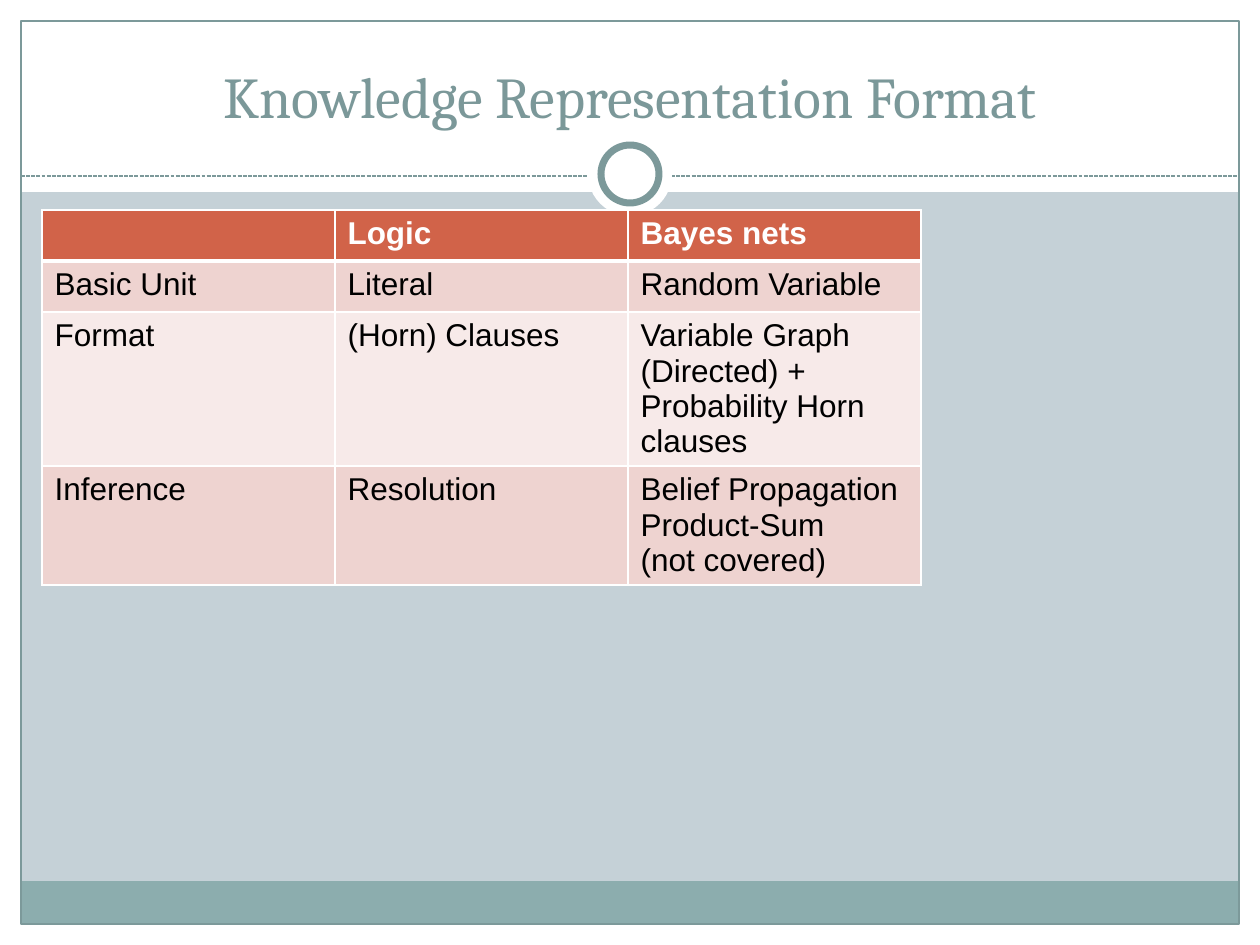
import pptx
import pptx.dml.color
import pptx.enum.dml
import pptx.enum.shapes
import pptx.enum.text
import pptx.oxml
import pptx.oxml.ns
import pptx.util

SLIDE_W, SLIDE_H = 1260, 945
MARGIN = 21
WHITE, BLACK, SAGE, TITLE_INK = "FFFFFF", "000000", "7C999A", "7B9899"
BACKDROP, FOOTER, HEADER = "C5D1D7", "8CADAE", "D16349"
BANDS = ("EED3D0", "F7EAE9")
ROW_HEIGHTS = (51, 51, 154, 119)
COMPARISON = (
    ("", "Logic", "Bayes nets"),
    ("Basic Unit", "Literal", "Random Variable"),
    ("Format", "(Horn) Clauses", "Variable Graph\v(Directed) +\nProbability Horn clauses"),
    ("Inference", "Resolution", "Belief Propagation\vProduct-Sum\v(not covered)"),
)


def px(length):
    """Turn pixels at 126 to the inch into EMU."""
    return pptx.util.Emu(round(length * 914400 / 126))


def color(value):
    """Turn a hex string into a colour."""
    return pptx.dml.color.RGBColor.from_string(value)


def add_figure(slide, box, fill=None, line=None, width=0.75, kind="RECTANGLE"):
    """Draw one preset shape in a box, without a shadow."""
    preset = getattr(pptx.enum.shapes.MSO_SHAPE, kind)
    figure = slide.shapes.add_shape(preset, *map(px, box))
    figure.shadow.inherit = False
    if fill:
        figure.fill.solid()
        figure.fill.fore_color.rgb = color(fill)
    else:
        figure.fill.background()
    if line:
        figure.line.color.rgb = color(line)
        figure.line.width = pptx.util.Pt(width)
    else:
        figure.line.fill.background()


def add_divider(slide, left, right, y):
    """Draw the dashed line under the title."""
    divider = slide.shapes.add_connector(
        pptx.enum.shapes.MSO_CONNECTOR.STRAIGHT, px(left), px(y), px(right), px(y))
    divider.line.color.rgb = color(SAGE)
    divider.line.width = pptx.util.Pt(0.75)
    divider.line.dash_style = pptx.enum.dml.MSO_LINE.SQUARE_DOT
    pptx.oxml.ns.qn("a:effectLst")
    divider._element.spPr.append(pptx.oxml.parse_xml(
        f'<a:effectLst {pptx.oxml.ns.nsdecls("a")}/>'))


def add_circle(slide, center, diameter, **style):
    """Draw a white circle around a centre."""
    x, y = center
    box = (x - diameter / 2, y - diameter / 2, diameter, diameter)
    add_figure(slide, box, WHITE, kind="OVAL", **style)


def add_backdrop(slide, box):
    """Draw the white margins, footer band, frame and title ornament."""
    left, top, width, height = box
    right, bottom = left + width, top + height
    inner_w = width - 2 * MARGIN
    slide.background.fill.solid()
    slide.background.fill.fore_color.rgb = color(BACKDROP)
    for margin in (
        (left, bottom - MARGIN, width, MARGIN),
        (left, top, width, 192),
        (left, top, MARGIN, height),
        (right - MARGIN, top, MARGIN, height),
    ):
        add_figure(slide, margin, WHITE)
    add_figure(slide, (left + MARGIN, bottom - MARGIN - 43, inner_w, 43), FOOTER)
    add_figure(slide, (left + MARGIN, top + MARGIN, inner_w, height - 2 * MARGIN), line=SAGE)
    add_divider(slide, left + MARGIN, right - MARGIN, top + 176)
    center = (left + width / 2, top + 174)
    add_circle(slide, center, 84)
    add_circle(slide, center, 58, line=SAGE, width=4)


def add_run(paragraph, text, size, font, ink, bold=False):
    """Add one formatted run to a paragraph."""
    run = paragraph.add_run()
    run.text = text
    run.font.size = pptx.util.Pt(size)
    run.font.name = font
    run.font.bold = bold
    run.font.color.rgb = color(ink)


def place_title(slide, box, text):
    """Move the title placeholder to its box, in front of the backdrop."""
    title = slide.shapes.title
    title.left, title.top, title.width, title.height = map(px, box)
    slide.shapes._spTree.append(title._element)
    frame = title.text_frame
    frame.word_wrap = True
    frame.auto_size = pptx.enum.text.MSO_AUTO_SIZE.NONE
    frame.vertical_anchor = pptx.enum.text.MSO_ANCHOR.BOTTOM
    heading = frame.paragraphs[0]
    heading.alignment = pptx.enum.text.PP_ALIGN.CENTER
    add_run(heading, text, 33, "Cambria", TITLE_INK)


def set_borders(cell, bottom_width):
    """Give a cell white borders, with its own bottom width."""
    widths = {"lnL": 1, "lnR": 1, "lnT": 1, "lnB": bottom_width}
    properties = cell._tc.get_or_add_tcPr()
    for position, (side, width) in enumerate(widths.items()):
        properties.insert(position, pptx.oxml.parse_xml(
            f'<a:{side} {pptx.oxml.ns.nsdecls("a")} w="{pptx.util.Pt(width)}">'
            f'<a:solidFill><a:srgbClr val="{WHITE}"/></a:solidFill></a:{side}>'))


def fill_cell(cell, text, fill, ink, bold):
    """Colour a cell and write its paragraphs and line breaks."""
    cell.fill.solid()
    cell.fill.fore_color.rgb = color(fill)
    frame = cell.text_frame
    for index, content in enumerate(text.split("\n") if text else ()):
        paragraph = frame.add_paragraph() if index else frame.paragraphs[0]
        for number, line in enumerate(content.split("\v")):
            if number:
                paragraph.add_line_break()
            add_run(paragraph, line, 18, "Arial", ink, bold)


def add_comparison(slide, box):
    """Add the table that compares logic with Bayes nets."""
    table = slide.shapes.add_table(
        len(COMPARISON), len(COMPARISON[0]), *map(px, box)).table
    for row, height in zip(table.rows, ROW_HEIGHTS):
        row.height = px(height)
    for r, texts in enumerate(COMPARISON):
        is_header = r == 0
        fill = HEADER if is_header else BANDS[(r - 1) % 2]
        for c, text in enumerate(texts):
            cell = table.cell(r, c)
            fill_cell(cell, text, fill, WHITE if is_header else BLACK, is_header)
            set_borders(cell, 3 if is_header else 1)


def main():
    """Build and save the slide."""
    deck = pptx.Presentation()
    deck.slide_width, deck.slide_height = px(SLIDE_W), px(SLIDE_H)
    slide = deck.slides.add_slide(deck.slide_layouts.get_by_name("Title Only"))
    add_backdrop(slide, (0, 0, SLIDE_W, SLIDE_H))
    place_title(slide, (42, 32, 1176, 104), "Knowledge Representation Format")
    add_comparison(slide, (42, 210, 879, sum(ROW_HEIGHTS)))
    deck.save("out.pptx")


if __name__ == "__main__":
    main()
